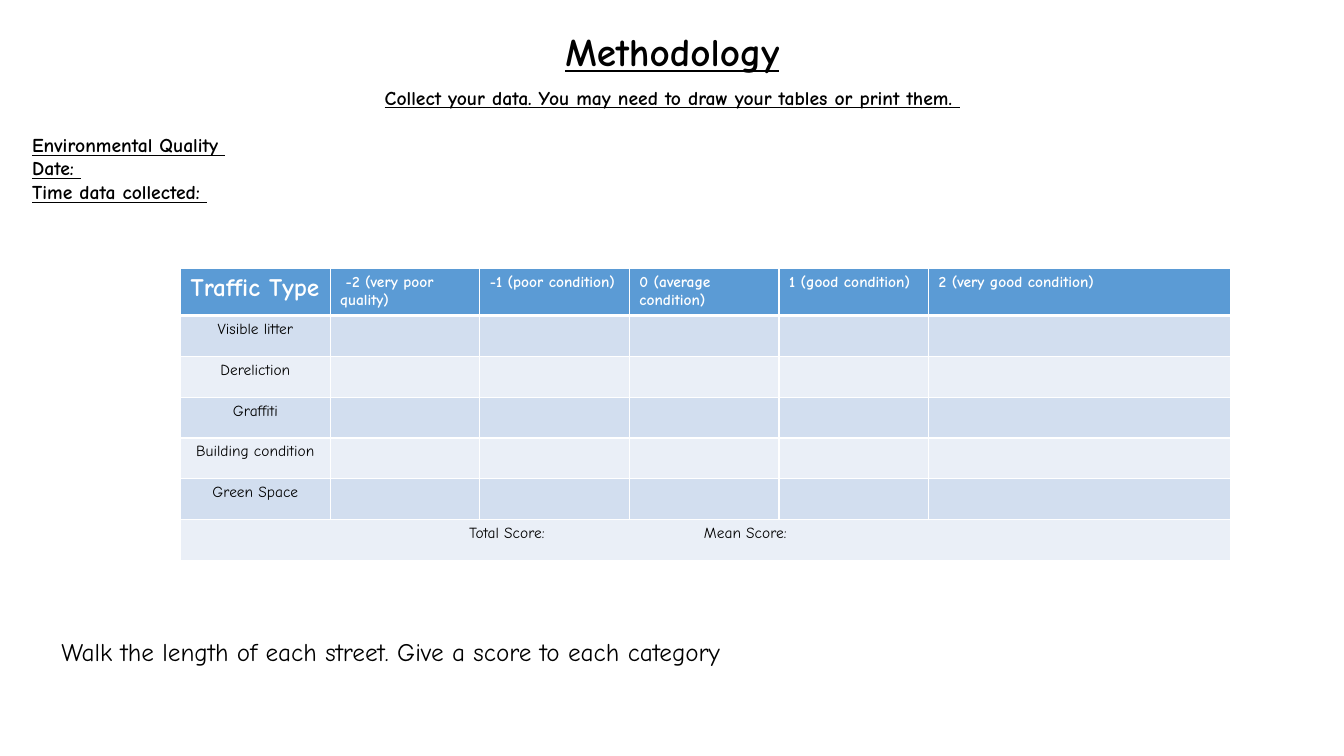
"""Build the Methodology slide with an environmental quality score table."""
from lxml import etree
from pptx import Presentation
from pptx.dml.color import RGBColor
from pptx.enum.text import PP_ALIGN
from pptx.oxml.ns import qn
from pptx.util import Cm, Pt

LEFT, CENTER = PP_ALIGN.LEFT, PP_ALIGN.CENTER
FONT = "Comic Neue"
BLACK, WHITE = "000000", "FFFFFF"
HEADER_FILL = "5B9BD5"
BAND_FILLS = ["EAEFF7", "D2DEEF"]


def color(value):
    return RGBColor.from_string(value)


def format_paragraph(paragraph, size, align=LEFT, bold=False, underline=False, ink=BLACK):
    paragraph.alignment = align
    for target in [paragraph, *paragraph.runs]:
        font = target.font
        font.name, font.size = FONT, Pt(size)
        font.bold, font.underline = bold, underline
        font.color.rgb = color(ink)


presentation = Presentation()
presentation.slide_width, presentation.slide_height = Cm(33.87), Cm(19.05)
slide = presentation.slides.add_slide(presentation.slide_layouts[6])

text_boxes = [
    (0.56, 0.56, 32.77, 1.45, 28, True, CENTER, ["Methodology"]),
    (0.56, 2.03, 32.77, 4.45, 14, True, LEFT, [
        "Collect your data. You may need to draw your tables or print them. ",
        "Environmental Quality ",
        "Date: ",
        "Time data collected: ",
    ]),
    (1.3, 15.9, 31.29, 1.02, 18, False, LEFT,
     ["Walk the length of each street. Give a score to each category"]),
]
for left, top, width, height, size, heading, align, lines in text_boxes:
    shape = slide.shapes.add_textbox(Cm(left), Cm(top), Cm(width), Cm(height))
    text_frame = shape.text_frame
    text_frame.word_wrap = True
    text_frame.text = "\n".join(lines)
    for paragraph in text_frame.paragraphs:
        format_paragraph(paragraph, size, align, heading, heading)
    if len(lines) > 1:
        text_frame.paragraphs[0].alignment = CENTER
        text_frame.paragraphs[0].space_after = Pt(17)

headers = [
    "Traffic Type", " -2 (very poor quality)", "-1 (poor condition)",
    "0 (average condition)", "1 (good condition)", "2 (very good condition)",
]
categories = ["Visible litter", "Dereliction", "Graffiti", "Building condition", "Green Space"]
rows = [headers] + [[category] + [""] * 5 for category in categories]
rows.append(["Total Score:\tMean Score:"] + [""] * 5)

table = slide.shapes.add_table(
    len(rows), len(headers), Cm(4.55), Cm(6.76), Cm(22.62), Cm(7.21)).table
for column in table.columns:
    column.width = Cm(3.77)
for row in table.rows:
    row.height = Cm(1.03)

for row_index, texts in enumerate(rows):
    is_header = row_index == 0
    for column_index, text in enumerate(texts):
        cell = table.cell(row_index, column_index)
        cell.text = text
        paragraph = cell.text_frame.paragraphs[0]
        if is_header:
            size = 18 if column_index == 0 else 11
            format_paragraph(paragraph, size, bold=True, ink=WHITE)
        else:
            format_paragraph(paragraph, 11, CENTER)
        cell.fill.solid()
        cell.fill.fore_color.rgb = color(HEADER_FILL if is_header else BAND_FILLS[row_index % 2])
        properties = cell._tc.get_or_add_tcPr()
        for position, side in enumerate(["lnL", "lnR", "lnT", "lnB"]):
            thick = (is_header and side == "lnB") or (row_index == 1 and side == "lnT")
            line = etree.Element(qn(f"a:{side}"), w=str(Pt(3 if thick else 1)))
            line_fill = etree.SubElement(line, qn("a:solidFill"))
            etree.SubElement(line_fill, qn("a:srgbClr"), val=WHITE)
            properties.insert(position, line)

score_cell = table.cell(len(rows) - 1, 0)
score_cell.merge(table.cell(len(rows) - 1, len(headers) - 1))
score_cell.margin_left = Cm(7.27)
score_paragraph = score_cell.text_frame.paragraphs[0]
score_paragraph.alignment = LEFT
tab_stops = etree.SubElement(score_paragraph._p.get_or_add_pPr(), qn("a:tabLst"))
etree.SubElement(tab_stops, qn("a:tab"), pos=str(Cm(5.92)), algn="l")
score_properties = score_paragraph._p.get_or_add_pPr()
score_properties.insert(0, tab_stops)

presentation.save("out.pptx")
